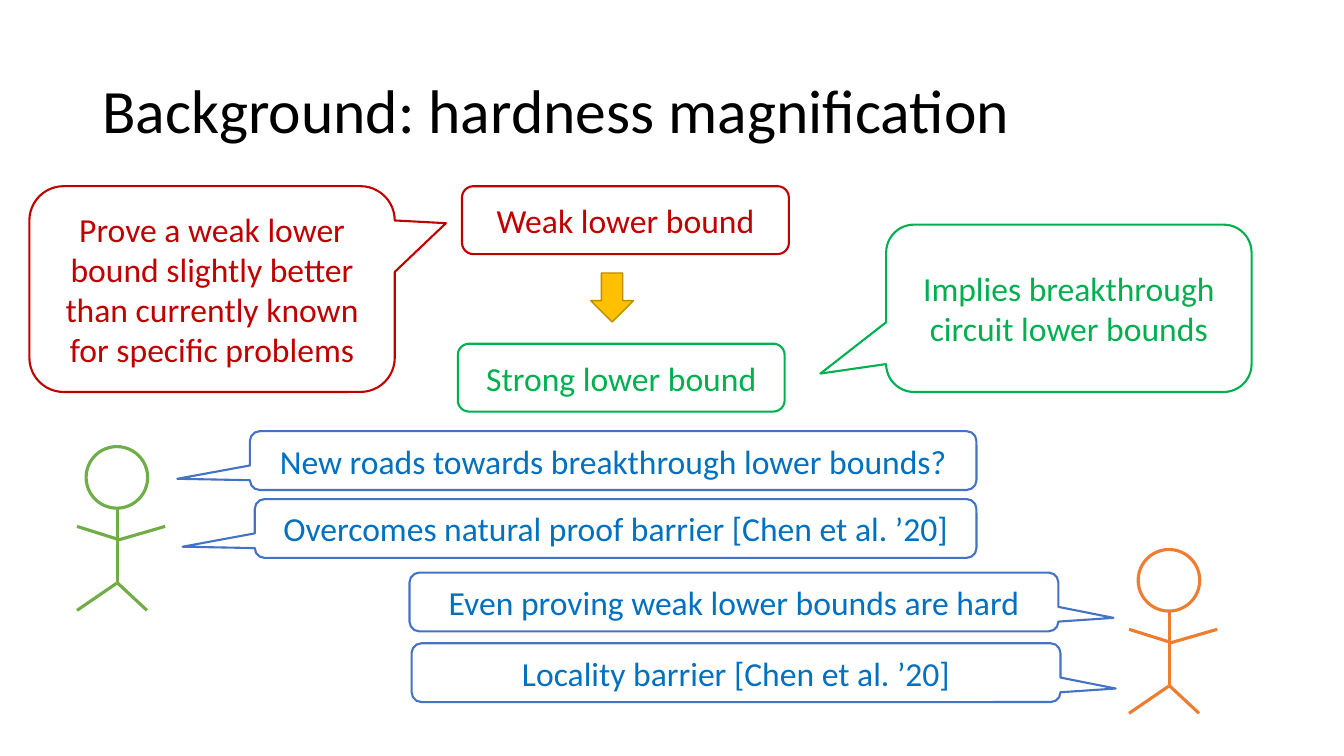
from lxml.etree import SubElement
from pptx import Presentation
from pptx.dml.color import RGBColor
from pptx.enum.shapes import MSO_CONNECTOR, MSO_SHAPE
from pptx.enum.text import MSO_ANCHOR, PP_ALIGN
from pptx.oxml.ns import qn
from pptx.util import Pt

FONT = "Calibri"
BLACK = RGBColor(0x00, 0x00, 0x00)
WHITE = RGBColor(0xFF, 0xFF, 0xFF)
RED = RGBColor(0xC0, 0x00, 0x00)
GREEN = RGBColor(0x00, 0xB0, 0x50)
BLUE_TEXT = RGBColor(0x00, 0x70, 0xC0)
BLUE_LINE = RGBColor(0x44, 0x72, 0xC4)
GOLD = RGBColor(0xFF, 0xC0, 0x00)
DARK_GOLD = RGBColor(0xBD, 0x8E, 0x00)
OPTIMIST_GREEN = RGBColor(0x70, 0xAD, 0x47)
SKEPTIC_ORANGE = RGBColor(0xED, 0x7D, 0x31)

FIGURE_LIMBS = [
    ((28.5, 67), (63, 57)),
    ((0, 57), (28.5, 66)),
    ((0, 117), (28.5, 97.5)),
    ((28.5, 97), (50, 117)),
    ((29, 44.5), (29, 97)),
]


def add_outlined(shapes, kind, box, fill, line, width):
    """Add a filled preset shape with an outline and no shadow."""
    shape = shapes.add_shape(kind, *map(Pt, box))
    shape.shadow.inherit = False
    shape.fill.solid()
    shape.fill.fore_color.rgb = fill
    shape.line.color.rgb = line
    shape.line.width = Pt(width)
    return shape


def add_label(slide, kind, box, text, color, line):
    """Add a white shape with a centred coloured label."""
    shape = add_outlined(slide.shapes, kind, box, WHITE, line, 1.5)
    frame = shape.text_frame
    frame.word_wrap = True
    frame.vertical_anchor = MSO_ANCHOR.MIDDLE
    paragraph = frame.paragraphs[0]
    paragraph.text = text
    paragraph.alignment = PP_ALIGN.CENTER
    paragraph.font.name = FONT
    paragraph.font.size = Pt(24)
    paragraph.font.color.rgb = color
    return shape


def add_callout(slide, box, text, color, line, tip):
    """Add a speech bubble whose tip is given relative to its size."""
    kind = MSO_SHAPE.ROUNDED_RECTANGULAR_CALLOUT
    bubble = add_label(slide, kind, box, text, color, line)
    bubble.adjustments[0], bubble.adjustments[1] = tip


def add_title(slide, box):
    """Place and format the title placeholder."""
    title = slide.shapes.title
    title.left, title.top, title.width, title.height = map(Pt, box)
    title.text_frame.vertical_anchor = MSO_ANCHOR.MIDDLE
    paragraph = title.text_frame.paragraphs[0]
    paragraph.text = "Background: hardness magnification"
    paragraph.alignment = PP_ALIGN.LEFT
    paragraph.line_spacing = 0.9
    paragraph.font.name = FONT
    paragraph.font.size = Pt(44)
    paragraph.font.color.rgb = BLACK


def add_magnification(slide, left, top):
    """Draw the weak-to-strong implication with its two explanations."""
    rounded = MSO_SHAPE.ROUNDED_RECTANGLE
    add_label(slide, rounded, (left + 309, top, 233.5, 48.5),
              "Weak lower bound", RED, RED)
    add_label(slide, rounded, (left + 306, top + 112.5, 233.5, 48.5),
              "Strong lower bound", GREEN, GREEN)
    add_callout(slide, (left, top, 261, 147),
                "Prove a weak lower bound slightly better than currently "
                "known for specific problems", RED, RED, (0.64, -0.32))
    add_callout(slide, (left + 612, top + 27.5, 261, 119.5),
                "Implies breakthrough circuit lower bounds",
                GREEN, GREEN, (-0.68, 0.39))
    add_outlined(slide.shapes, MSO_SHAPE.DOWN_ARROW,
                 (left + 401, top + 62, 30.5, 35), GOLD, DARK_GOLD, 1)


def add_dialogue(slide, left, top):
    """Draw the remarks of the two speakers."""
    to_optimist, to_skeptic = (-0.6, 0.31), (0.585, 0.27)
    remarks = [
        (0, 0, 519, "New roads towards breakthrough lower bounds?", to_optimist),
        (3.5, 48.5, 515.5, "Overcomes natural proof barrier [Chen et al. ’20]",
         to_optimist),
        (114, 101, 463.5, "Even proving weak lower bounds are hard", to_skeptic),
        (115.5, 151.5, 463.5, "Locality barrier [Chen et al. ’20]", to_skeptic),
    ]
    for x, y, width, text, tip in remarks:
        add_callout(slide, (left + x, top + y, width, 42), text,
                    BLUE_TEXT, BLUE_LINE, tip)


def add_stick_figure(slide, left, top, color):
    """Draw a grouped stick figure."""
    shapes = slide.shapes.add_group_shape().shapes
    add_outlined(shapes, MSO_SHAPE.OVAL, (left + 6.5, top, 44, 44),
                 WHITE, color, 2.25)
    for (x1, y1), (x2, y2) in FIGURE_LIMBS:
        limb = shapes.add_connector(MSO_CONNECTOR.STRAIGHT,
                                    Pt(left + x1), Pt(top + y1),
                                    Pt(left + x2), Pt(top + y2))
        limb.line.color.rgb = color
        limb.line.width = Pt(2.25)
        SubElement(limb._element.spPr, qn("a:effectLst"))


def main():
    """Build and save the slide."""
    presentation = Presentation()
    presentation.slide_width, presentation.slide_height = Pt(960), Pt(540)
    slide = presentation.slides.add_slide(presentation.slide_layouts[5])
    add_title(slide, (66, 29, 828, 104))
    add_magnification(slide, 21, 133)
    add_dialogue(slide, 178.5, 308)
    add_stick_figure(slide, 55, 319, OPTIMIST_GREEN)
    add_stick_figure(slide, 806.5, 392.5, SKEPTIC_ORANGE)
    presentation.save("out.pptx")


if __name__ == "__main__":
    main()
